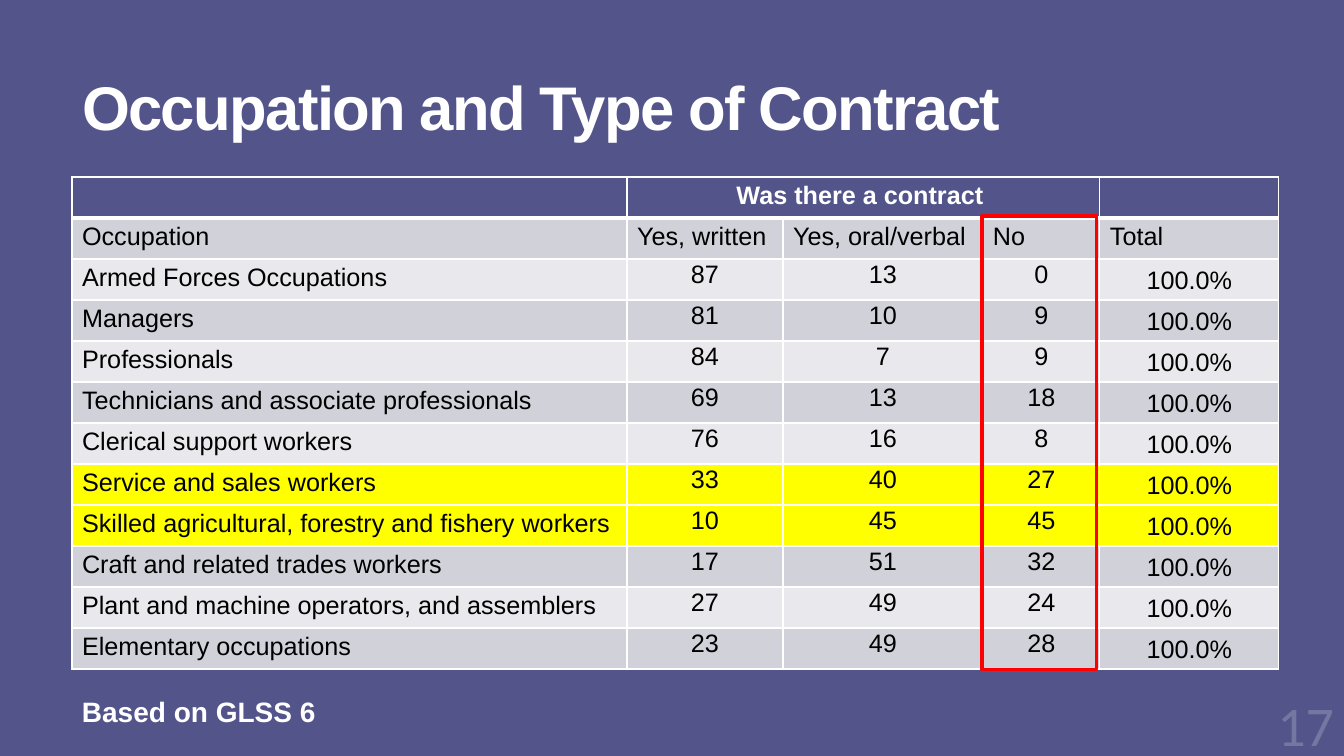
from lxml import etree
from pptx import Presentation
from pptx.dml.color import RGBColor
from pptx.enum.shapes import MSO_SHAPE
from pptx.enum.text import MSO_ANCHOR, PP_ALIGN
from pptx.oxml.ns import qn
from pptx.util import Emu, Pt

CENTER, RIGHT, LEFT = PP_ALIGN.CENTER, PP_ALIGN.RIGHT, PP_ALIGN.LEFT
TOP, MIDDLE = MSO_ANCHOR.TOP, MSO_ANCHOR.MIDDLE
RECTANGLE = MSO_SHAPE.RECTANGLE

PURPLE, WHITE, BLACK = "53548A", "FFFFFF", "000000"
DARK_BAND, LIGHT_BAND, YELLOW = "D1D1DA", "E9E9ED", "FFFF00"
RED, PALE_PURPLE = "FF0000", "7677A1"

COLUMN_WIDTHS = [555, 156, 200, 117, 179]
ROW_HEIGHT = 41
COLUMN_HEADINGS = ["Occupation", "Yes, written", "Yes, oral/verbal", "No", "Total"]
OCCUPATIONS = [
    ("Armed Forces Occupations", 87, 13, 0),
    ("Managers", 81, 10, 9),
    ("Professionals", 84, 7, 9),
    ("Technicians and associate professionals", 69, 13, 18),
    ("Clerical support workers", 76, 16, 8),
    ("Service and sales workers", 33, 40, 27),
    ("Skilled agricultural, forestry and fishery workers", 10, 45, 45),
    ("Craft and related trades workers", 17, 51, 32),
    ("Plant and machine operators, and assemblers", 27, 49, 24),
    ("Elementary occupations", 23, 49, 28),
]
HIGHLIGHTED = {"Service and sales workers",
               "Skilled agricultural, forestry and fishery workers"}


def px(length):
    return Emu(round(length * 914400 / 100.8))


def color(hex_string):
    return RGBColor.from_string(hex_string)


def place(shape, left, top, width, height):
    shape.left, shape.top = px(left), px(top)
    shape.width, shape.height = px(width), px(height)


def write(text_frame, text, size, hex_string, bold=False, align=LEFT, font="Arial"):
    """Set one paragraph of text, format it and return the paragraph."""
    text_frame.text = text
    paragraph = text_frame.paragraphs[0]
    paragraph.alignment = align
    for run in paragraph.runs:
        run.font.size = Pt(size)
        run.font.name = font
        run.font.bold = bold
        run.font.color.rgb = color(hex_string)
    return paragraph


def add_title(slide, text):
    title = slide.shapes.title
    place(title, 72, 21, 1187, 182)
    title.text_frame.word_wrap = True
    title.text_frame.vertical_anchor = MIDDLE
    paragraph = write(title.text_frame, text, 44, WHITE, bold=True)
    paragraph.line_spacing = 0.85
    paragraph.runs[0].font._element.set("spc", "-120")


def add_label(slide, box, text, size, hex_string, **text_format):
    label = slide.shapes.add_textbox(*map(px, box))
    label.text_frame.word_wrap = False
    write(label.text_frame, text, size, hex_string, **text_format)


def set_borders(cell, top=1, bottom=1):
    """Draw white cell borders; top and bottom are widths in points."""
    properties = cell._tc.get_or_add_tcPr()
    for tag, width in (("a:lnL", 1), ("a:lnR", 1), ("a:lnT", top), ("a:lnB", bottom)):
        line = etree.SubElement(properties, qn(tag), w=str(Pt(width)))
        fill = etree.SubElement(line, qn("a:solidFill"))
        etree.SubElement(fill, qn("a:srgbClr"), val=WHITE)


def fill_cell(cell, hex_string):
    cell.fill.solid()
    cell.fill.fore_color.rgb = color(hex_string)


def format_value(cell, side_margin, anchor):
    cell.margin_left = cell.margin_right = px(side_margin)
    cell.margin_top = cell.margin_bottom = 0
    cell.vertical_anchor = anchor
    cell.text_frame.paragraphs[0].line_spacing = 1.07


def add_header_row(table):
    for column in range(len(COLUMN_WIDTHS)):
        cell = table.cell(0, column)
        set_borders(cell, bottom=3)
        fill_cell(cell, PURPLE)
    contract = table.cell(0, 1)
    contract.merge(table.cell(0, 3))
    write(contract.text_frame, "Was there a contract ", 18, WHITE, bold=True, align=CENTER)


def add_heading_row(table):
    for column, heading in enumerate(COLUMN_HEADINGS):
        cell = table.cell(1, column)
        set_borders(cell, top=3)
        fill_cell(cell, DARK_BAND)
        write(cell.text_frame, heading, 18, BLACK)


def add_occupation_row(table, row, occupation):
    band = LIGHT_BAND if row % 2 == 0 else DARK_BAND
    fill = YELLOW if occupation[0] in HIGHLIGHTED else band
    last = len(COLUMN_WIDTHS) - 1
    for column, value in enumerate((*occupation, "100.0%")):
        cell = table.cell(row, column)
        set_borders(cell)
        fill_cell(cell, fill)
        write(cell.text_frame, str(value), 18, BLACK, align=CENTER if column else LEFT)
        if column == last:
            format_value(cell, 6, MIDDLE)
        elif column:
            format_value(cell, 7, TOP)


def add_contract_table(slide):
    row_count = len(OCCUPATIONS) + 2
    frame = slide.shapes.add_table(
        row_count, len(COLUMN_WIDTHS), px(72), px(177),
        px(sum(COLUMN_WIDTHS)), px(ROW_HEIGHT * row_count))
    table = frame.table
    for column, width in zip(table.columns, COLUMN_WIDTHS):
        column.width = px(width)
    for row in table.rows:
        row.height = px(ROW_HEIGHT)
    add_header_row(table)
    add_heading_row(table)
    for row, occupation in enumerate(OCCUPATIONS, start=2):
        add_occupation_row(table, row, occupation)


def add_outline(slide, box, hex_string):
    outline = slide.shapes.add_shape(RECTANGLE, *map(px, box))
    outline.shadow.inherit = False
    outline.fill.background()
    outline.line.color.rgb = color(hex_string)
    outline.line.width = Pt(2.25)


def main():
    presentation = Presentation()
    presentation.slide_width, presentation.slide_height = px(1344), px(756)
    slide = presentation.slides.add_slide(presentation.slide_layouts[5])
    slide.background.fill.solid()
    slide.background.fill.fore_color.rgb = color(PURPLE)

    add_title(slide, "Occupation and Type of Contract")
    add_contract_table(slide)
    add_outline(slide, (982, 216, 115, 454), RED)
    add_label(slide, (72, 690, 256, 44), "Based on GLSS 6", 20, WHITE, bold=True)
    add_label(slide, (1244, 686, 100, 76), "17", 40, PALE_PURPLE,
              align=RIGHT, font="Calibri")
    presentation.save("out.pptx")


if __name__ == "__main__":
    main()
